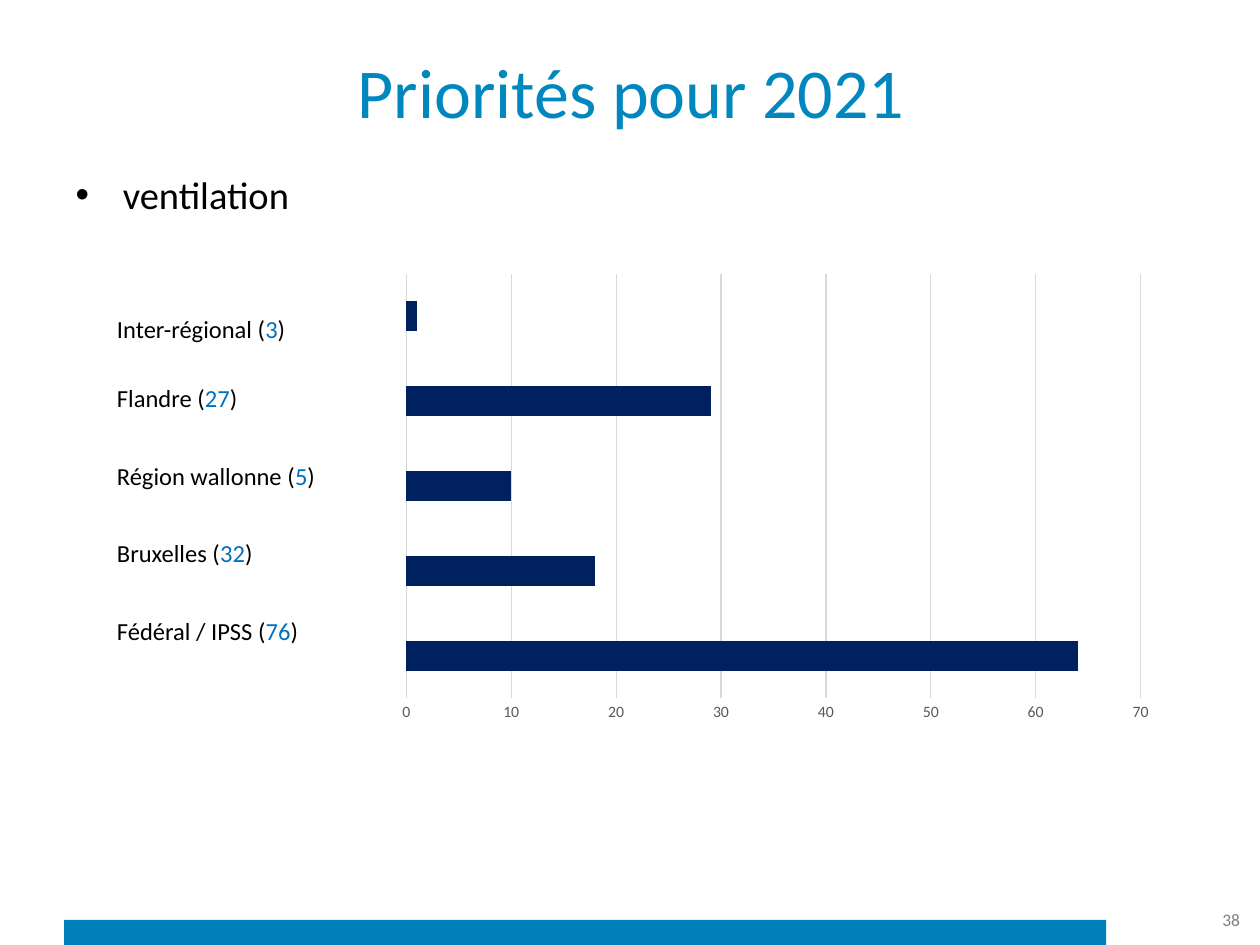
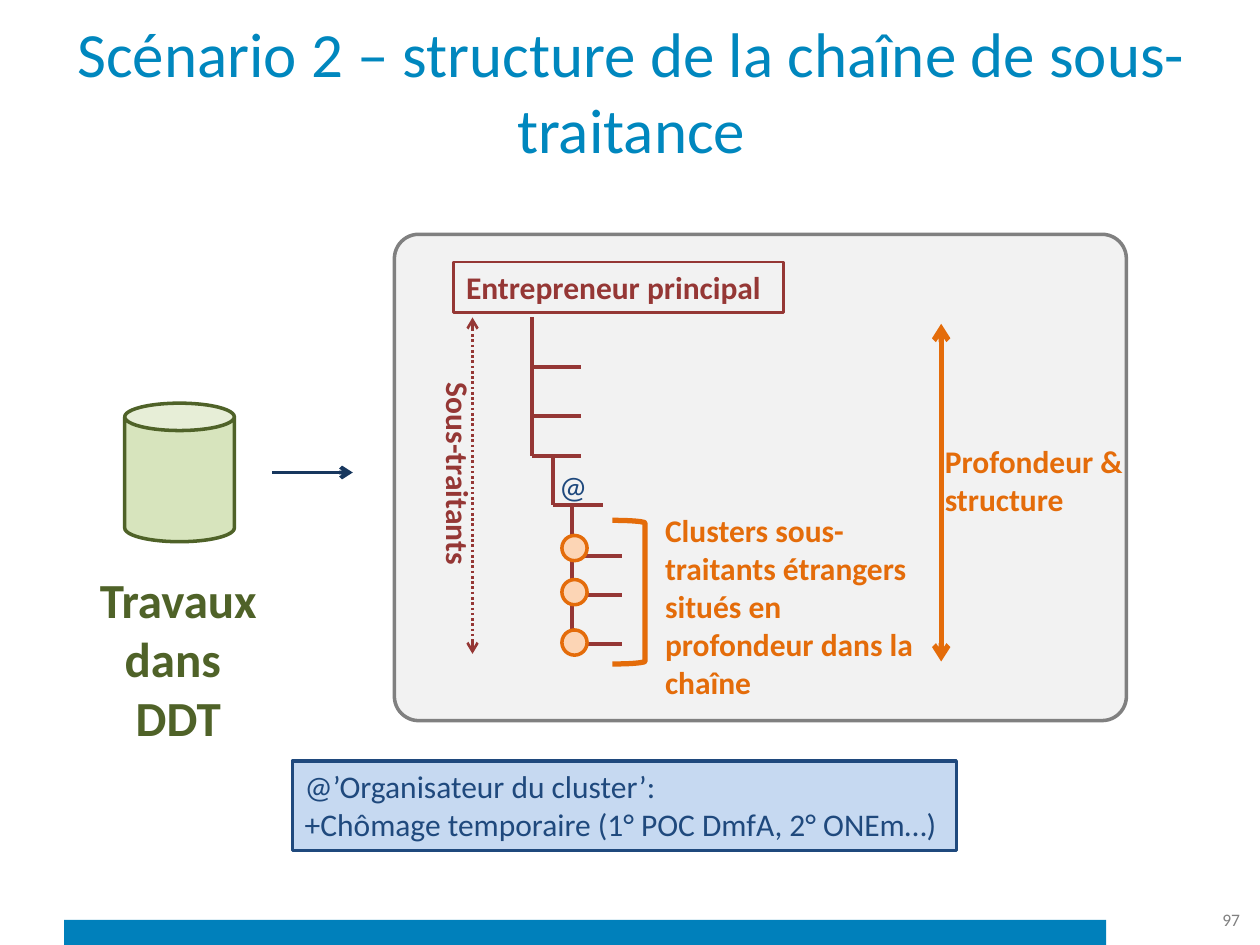
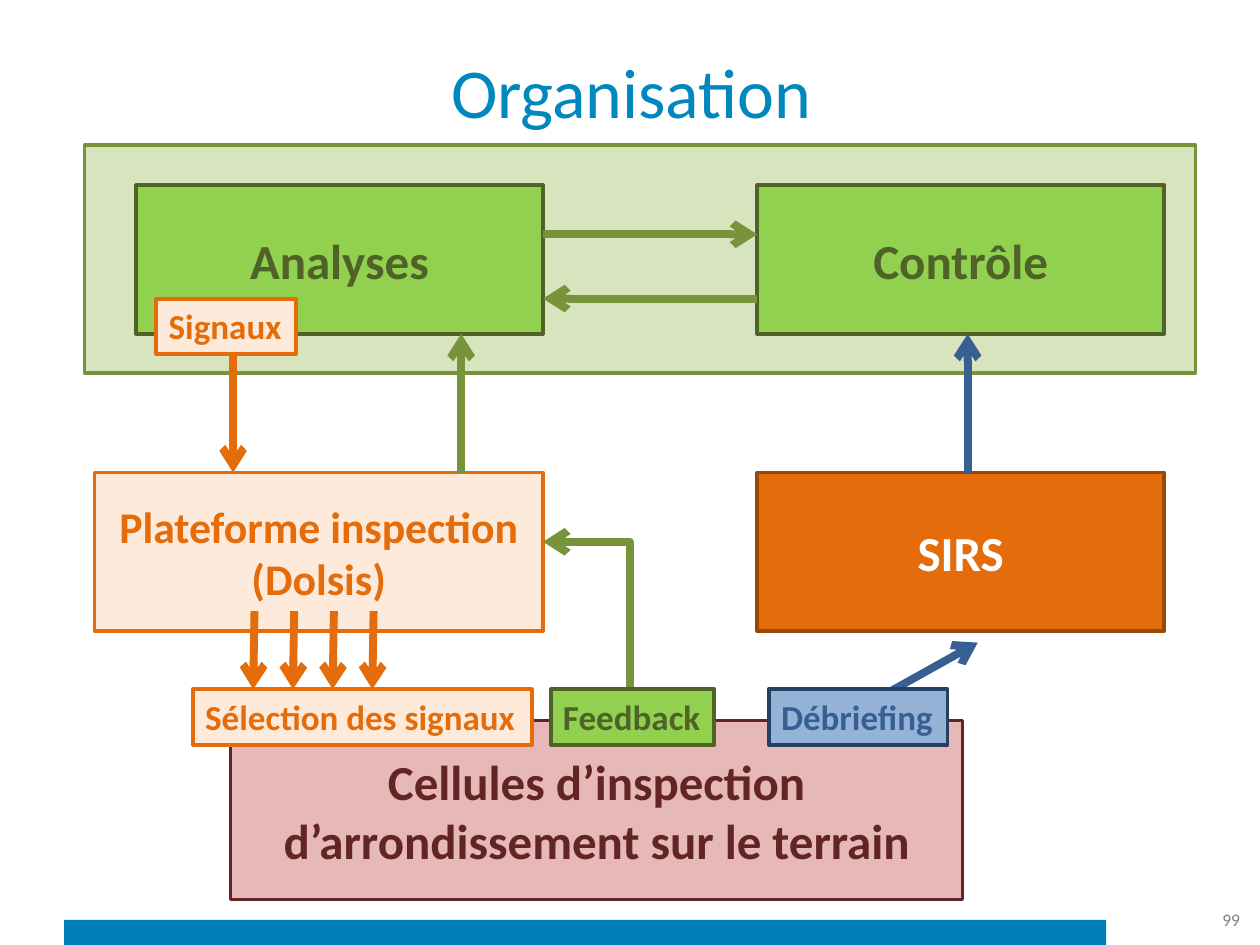
import dataclasses
import typing

import lxml.etree
import pptx
import pptx.chart.data
import pptx.dml.color
import pptx.enum.chart
import pptx.enum.dml
import pptx.enum.shapes
import pptx.enum.text
import pptx.oxml.ns
import pptx.util

SLIDE_WIDTH = pptx.util.Inches(10)
SLIDE_HEIGHT = pptx.util.Inches(7.5)
GRID_COLUMNS, GRID_ROWS = 100, 75
FONT = "Calibri"

COLORS = {
    "title": "0087BE", "band": "0080BB", "number": "808080", "black": "000000",
    "count": "0070C0", "bar": "002060", "axis_text": "595959", "grid": "D9D9D9",
    "panel": "F2F2F2", "grey": "808080", "red": "953735", "orange": "E46C0A",
    "peach": "FCD5B5", "cream": "FDEADA", "brown": "984807", "pale_green": "D7E4BD",
    "olive": "77933C", "dark_green": "4F6228", "green": "92D050", "navy": "17375E",
    "blue": "1F497D", "pale_blue": "C6D9F1", "steel": "376092", "sky": "95B3D7",
    "deep_blue": "254061", "rose": "E6B9B8", "maroon": "632523", "white": "FFFFFF",
}

Shape = pptx.enum.shapes.MSO_SHAPE
Align = pptx.enum.text.PP_ALIGN
Anchor = pptx.enum.text.MSO_ANCHOR
AutoSize = pptx.enum.text.MSO_AUTO_SIZE


class Area(typing.NamedTuple):
    """Left and width in grid columns, top and height in grid rows."""
    left: float
    top: float
    width: float
    height: float


class Point(typing.NamedTuple):
    column: float
    row: float


class TextStyle(typing.NamedTuple):
    size: float
    color: str
    bold: bool = False
    align: Align = Align.LEFT


@dataclasses.dataclass(frozen=True)
class Box:
    """A shape, or a text box when kind is None; each line is a list of coloured runs or a string."""
    area: Area
    lines: tuple = ()
    style: TextStyle = TextStyle(18, "black")
    kind: typing.Optional[Shape] = Shape.RECTANGLE
    fill: typing.Optional[str] = None
    outline: typing.Optional[str] = None
    weight: float = 2
    anchor: Anchor = Anchor.TOP
    wrap: bool = True
    grow: bool = False
    rotation: float = 0
    adjustment: typing.Optional[float] = None


@dataclasses.dataclass(frozen=True)
class Line:
    start: Point
    end: Point
    color: str
    weight: float
    head: bool = False
    tail: bool = False
    dotted: bool = False


TITLE_AREA = Area(5.1, 2.1, 90, 10.1)
BODY_AREA = Area(5, 13.1, 90, 55.9)
BAND = Box(Area(5.1, 73, 82.7, 2), fill="band")
NUMBER_AREA = Area(91.2, 71, 8.2, 4)


def rgb(name: str) -> pptx.dml.color.RGBColor:
    return pptx.dml.color.RGBColor.from_string(COLORS[name])


def column(count: float) -> int:
    return round(SLIDE_WIDTH * count / GRID_COLUMNS)


def row(count: float) -> int:
    return round(SLIDE_HEIGHT * count / GRID_ROWS)


def place(area: Area) -> tuple[int, int, int, int]:
    return column(area.left), row(area.top), column(area.width), row(area.height)


def move(shape, area: Area) -> None:
    shape.left, shape.top, shape.width, shape.height = place(area)


def style_font(font, style: TextStyle) -> None:
    font.name = FONT
    font.size = pptx.util.Pt(style.size)
    font.bold = style.bold
    font.color.rgb = rgb(style.color)


def write(text_frame, lines: typing.Sequence, style: TextStyle) -> None:
    for index, line in enumerate(lines):
        paragraph = text_frame.add_paragraph() if index else text_frame.paragraphs[0]
        paragraph.alignment = style.align
        runs = [(line, style.color)] if isinstance(line, str) else line
        for text, color in runs:
            run = paragraph.add_run()
            run.text = text
            style_font(run.font, style._replace(color=color))


def draw_box(slide, box: Box):
    if box.kind is None:
        shape = slide.shapes.add_textbox(*place(box.area))
    else:
        shape = slide.shapes.add_shape(box.kind, *place(box.area))
        shape.shadow.inherit = False
        if box.fill:
            shape.fill.solid()
            shape.fill.fore_color.rgb = rgb(box.fill)
        else:
            shape.fill.background()
        if box.outline:
            shape.line.color.rgb = rgb(box.outline)
            shape.line.width = pptx.util.Pt(box.weight)
        else:
            shape.line.fill.background()
    if box.adjustment is not None:
        shape.adjustments[0] = box.adjustment
    shape.rotation = box.rotation
    if box.lines:
        text_frame = shape.text_frame
        text_frame.word_wrap = box.wrap
        text_frame.vertical_anchor = box.anchor
        text_frame.auto_size = AutoSize.SHAPE_TO_FIT_TEXT if box.grow else AutoSize.NONE
        write(text_frame, box.lines, box.style)
    return shape


def add_arrowheads(shape, head: bool, tail: bool) -> None:
    outline = shape._element.spPr.find(pptx.oxml.ns.qn("a:ln"))
    for tag, wanted in (("a:headEnd", head), ("a:tailEnd", tail)):
        if wanted:
            lxml.etree.SubElement(outline, pptx.oxml.ns.qn(tag)).set("type", "arrow")


def draw_line(slide, line: Line) -> None:
    connector = slide.shapes.add_connector(
        pptx.enum.shapes.MSO_CONNECTOR.STRAIGHT,
        column(line.start.column), row(line.start.row),
        column(line.end.column), row(line.end.row))
    connector.line.color.rgb = rgb(line.color)
    connector.line.width = pptx.util.Pt(line.weight)
    if line.dotted:
        connector.line.dash_style = pptx.enum.dml.MSO_LINE.ROUND_DOT
    add_arrowheads(connector, line.head, line.tail)
    lxml.etree.SubElement(connector._element.spPr, pptx.oxml.ns.qn("a:effectLst"))


def draw_bent_arrow(slide, points: typing.Sequence[Point], color: str, weight: float) -> None:
    start, *others = [(column(point.column), row(point.row)) for point in points]
    builder = slide.shapes.build_freeform(*start)
    builder.add_line_segments(others, close=False)
    shape = builder.convert_to_shape()
    shape.shadow.inherit = False
    shape.fill.background()
    shape.line.color.rgb = rgb(color)
    shape.line.width = pptx.util.Pt(weight)
    add_arrowheads(shape, False, True)


def add_slide(presentation, layout_index: int, title: str, number: int, title_size: float = 40):
    """Add a slide with the shared title, bottom band and page number."""
    slide = presentation.slides.add_slide(presentation.slide_layouts[layout_index])
    move(slide.shapes.title, TITLE_AREA)
    text_frame = slide.shapes.title.text_frame
    text_frame.auto_size = AutoSize.NONE
    text_frame.vertical_anchor = Anchor.MIDDLE
    write(text_frame, [title], TextStyle(title_size, "title", align=Align.CENTER))
    draw_box(slide, BAND)
    draw_box(slide, Box(NUMBER_AREA, (str(number),), TextStyle(10, "number", align=Align.RIGHT),
                        kind=None, anchor=Anchor.MIDDLE))
    return slide


def add_region_chart(slide, area: Area, values: typing.Sequence[int]) -> None:
    data = pptx.chart.data.CategoryChartData()
    data.categories = [str(index + 1) for index in range(len(values))]
    data.add_series("Series 1", values)
    chart = slide.shapes.add_chart(
        pptx.enum.chart.XL_CHART_TYPE.BAR_CLUSTERED, *place(area), data).chart
    chart.has_legend = False
    chart.has_title = False
    style_font(chart.font, TextStyle(10, "black"))
    plot = chart.plots[0]
    plot.gap_width = 182
    plot.vary_by_categories = False
    plot.series[0].format.fill.solid()
    plot.series[0].format.fill.fore_color.rgb = rgb("bar")
    chart.category_axis.visible = False
    axis = chart.value_axis
    axis.minimum_scale, axis.maximum_scale, axis.major_unit = 0, 70, 10
    axis.major_tick_mark = pptx.enum.chart.XL_TICK_MARK.NONE
    axis.minor_tick_mark = pptx.enum.chart.XL_TICK_MARK.NONE
    axis.format.line.fill.background()
    axis.major_gridlines.format.line.color.rgb = rgb("grid")
    axis.major_gridlines.format.line.width = pptx.util.Pt(0.75)
    style_font(axis.tick_labels.font, TextStyle(9, "axis_text"))


def build_priorities(presentation) -> None:
    slide = add_slide(presentation, 1, "Priorités pour 2021", 38)
    body = slide.placeholders[1]
    move(body, BODY_AREA)
    write(body.text_frame, ["ventilation"], TextStyle(22, "black"))
    body.text_frame.paragraphs[0].space_before = pptx.util.Pt(0)

    regions = (("Inter-régional", 3, 24.4), ("Flandre", 27, 29.9), ("Région wallonne", 5, 36.1),
               ("Bruxelles", 32, 42.2), ("Fédéral / IPSS", 76, 48.4))
    for region, count, top in regions:
        runs = ((f"{region} (", "black"), (str(count), "count"), (")", "black"))
        draw_box(slide, Box(Area(8.3, top, 25, 4.2), (runs,), TextStyle(14, "black"),
                            kind=None, grow=True))
    add_region_chart(slide, Area(30.7, 21, 61.7, 37), (64, 18, 10, 29, 1))


def build_subcontracting_chain(presentation) -> None:
    slide = add_slide(presentation, 5, "Scénario 2 – structure de la chaîne de sous-traitance", 97, 36)
    draw_box(slide, Box(Area(31.3, 18.6, 58.1, 38.6), kind=Shape.ROUNDED_RECTANGLE,
                        fill="panel", outline="grey", adjustment=0.05))

    branch_length = 3.95
    branches = ((42.2, 29.1), (42.2, 33), (42.2, 36.2), (43.9, 40.1),
                (45.4, 44.1), (45.4, 47.2), (45.4, 51.1))
    for trunk, level in branches:
        corner = Point(trunk, level)
        draw_line(slide, Line(Point(trunk, level - branch_length), corner, "red", 2.25))
        draw_line(slide, Line(corner, Point(trunk + branch_length, level), "red", 2.25))

    draw_box(slide, Box(Area(48.6, 41.3, 2.6, 11.4), kind=Shape.RIGHT_BRACKET,
                        outline="orange", weight=3))
    for top in (42.5, 46, 50):
        draw_box(slide, Box(Area(44.6, top, 2, 2), kind=Shape.OVAL, fill="peach", outline="orange"))

    orange, red = TextStyle(18, "orange", True), TextStyle(18, "red", True)
    blue = TextStyle(18, "blue")
    boxes = (
        Box(Area(51.8, 40.1, 23.4, 16.2),
            ("Clusters sous-traitants étrangers situés en profondeur dans la chaîne",),
            orange, kind=None, grow=True),
        Box(Area(9.9, 32, 8.7, 11), kind=Shape.CAN, fill="pale_green", outline="dark_green"),
        Box(Area(5.1, 44.7, 18.1, 15.1), ("Travaux dans ", "DDT"),
            TextStyle(28, "dark_green", True, Align.CENTER), kind=None, grow=True),
        Box(Area(36, 20.8, 26.2, 4), ("Entrepreneur principal",), red,
            outline="red", weight=1.5, wrap=False, grow=True),
        Box(Area(28.1, 35.7, 16.6, 4), ("Sous-traitants",), red,
            kind=None, wrap=False, grow=True, rotation=90),
        Box(Area(74, 34.6, 16.8, 7.1), ("Profondeur &", "structure"), orange,
            kind=None, wrap=False, grow=True),
        Box(Area(23.2, 60.4, 52.7, 7.1),
            ("@’Organisateur du cluster’:", "+Chômage temporaire (1° POC DmfA, 2° ONEm…)"),
            blue, fill="pale_blue", outline="blue", wrap=False, grow=True),
        Box(Area(43.4, 36.6, 4.3, 4), ("@",), blue, kind=None, wrap=False, grow=True),
    )
    for box in boxes:
        draw_box(slide, box)

    arrows = (
        Line(Point(37.5, 25.2), Point(37.5, 51.9), "red", 1.5, head=True, tail=True, dotted=True),
        Line(Point(21.6, 37.5), Point(28, 37.5), "navy", 2.25, tail=True),
        Line(Point(74.7, 25.7), Point(74.7, 52.5), "orange", 3, head=True, tail=True),
    )
    for arrow in arrows:
        draw_line(slide, arrow)


def build_organisation(presentation) -> None:
    slide = add_slide(presentation, 5, "Organisation", 99)
    draw_box(slide, Box(Area(6.7, 11.5, 88.2, 18.1), fill="pale_green", outline="olive"))

    units = (
        (Area(10.8, 14.7, 32.3, 11.8), ("Analyses",), 28, "dark_green", "green", "dark_green"),
        (Area(60.1, 14.7, 32.3, 11.8), ("Contrôle",), 28, "dark_green", "green", "dark_green"),
        (Area(7.5, 37.5, 35.6, 12.6), ("Plateforme inspection", "(Dolsis)"), 25,
         "orange", "cream", "orange"),
        (Area(60.1, 37.5, 32.3, 12.6), ("SIRS",), 28, "white", "orange", "brown"),
        (Area(18.3, 57.2, 58.1, 14.2), ("Cellules d’inspection d’arrondissement sur le terrain",),
         28, "maroon", "rose", "maroon"),
    )
    for area, lines, size, color, fill, outline in units:
        draw_box(slide, Box(area, lines, TextStyle(size, color, True, Align.CENTER),
                            fill=fill, outline=outline, anchor=Anchor.MIDDLE))

    flows = [
        (Point(18.5, 28), Point(18.5, 37.5), "orange"),
        (Point(36.6, 37.5), Point(36.6, 26.5), "olive"),
        (Point(68.1, 56.3), Point(77.6, 51), "steel"),
        (Point(76.8, 37.5), Point(76.8, 26.5), "steel"),
        (Point(43.1, 18.6), Point(60.1, 18.6), "olive"),
        (Point(60.1, 23.7), Point(43.1, 23.7), "olive"),
    ]
    for index in range(4):
        signal = 20.2 + 3.15 * index
        flows.append((Point(signal, 48.5), Point(signal - 0.1, 54.7), "orange"))
    for start, end, color in flows:
        draw_line(slide, Line(start, end, color, 4.5, tail=True))
    draw_bent_arrow(slide, (Point(50, 55.5), Point(50, 43), Point(43.1, 43)), "olive", 4.5)

    tags = (
        (Point(12.4, 23.7), 11.1, "Signaux", "orange", "cream", "orange"),
        (Point(43.7, 54.7), 13, "Feedback", "dark_green", "green", "dark_green"),
        (Point(61, 54.7), 14.2, "Débriefing", "steel", "sky", "deep_blue"),
        (Point(15.3, 54.7), 26.9, "Sélection des signaux", "orange", "cream", "orange"),
    )
    for corner, width, text, color, fill, outline in tags:
        draw_box(slide, Box(Area(*corner, width, 4.4), (text,), TextStyle(20, color, True),
                            fill=fill, outline=outline, weight=2.25, wrap=False, grow=True))


def main() -> None:
    presentation = pptx.Presentation()
    presentation.slide_width = SLIDE_WIDTH
    presentation.slide_height = SLIDE_HEIGHT
    build_priorities(presentation)
    build_subcontracting_chain(presentation)
    build_organisation(presentation)
    presentation.save("out.pptx")


if __name__ == "__main__":
    main()
